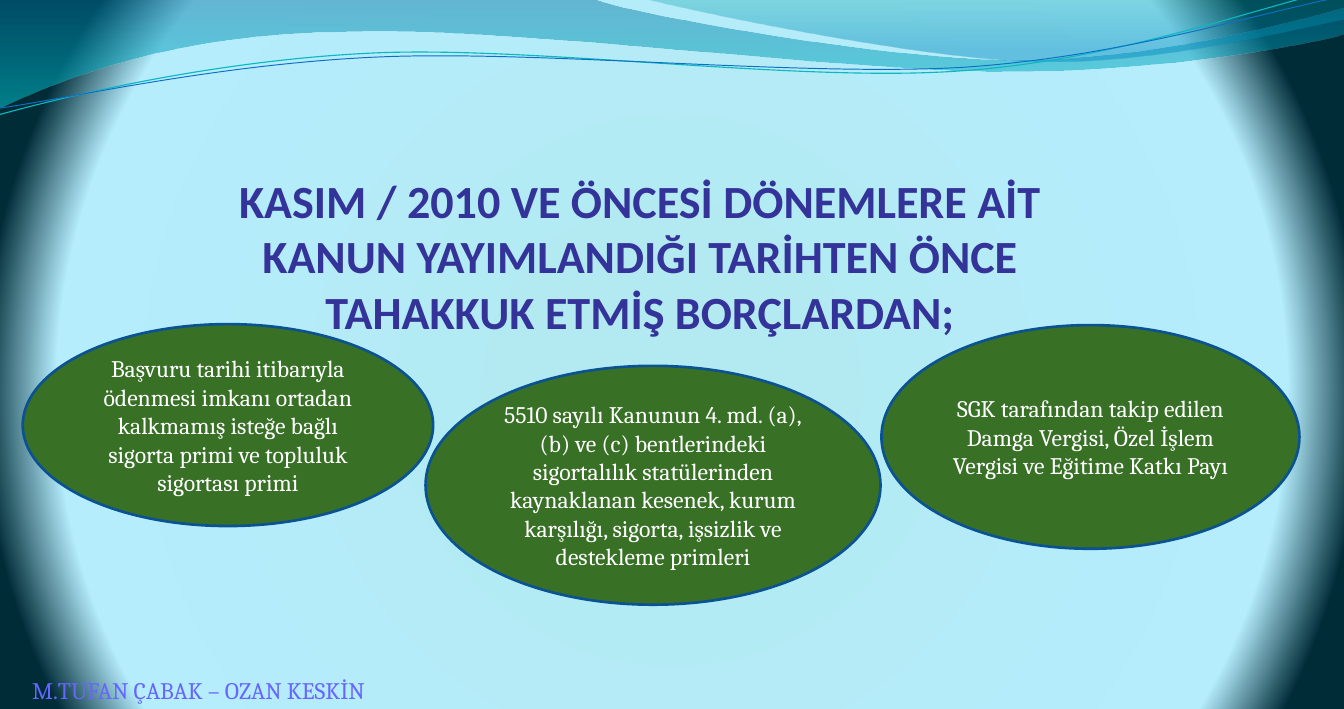
import math

import pptx
import pptx.dml.color
import pptx.enum.shapes
import pptx.enum.text
import pptx.oxml
import pptx.oxml.ns
import pptx.util
from lxml import etree
from pptx.util import Inches

COLORS = {
    "title": "333399", "footer": "6666FF", "white": "FFFFFF",
    "oval": "387026", "oval_line": "0B5292",
    "teal_line": "0AB8BF", "blue_line": "0F6FC6",
    "center": "B3EAF2", "pale": "B5EDFD", "edge": "002C38",
    "wave_top": "0074A1", "wave_bottom": "00C6CF",
    "crest_top": "00A1A9", "crest_bottom": "008BBF",
}
LINEAR = '<a:lin %s ang="5400000" scaled="0"/>'
RADIAL = ('<a:path %s path="circle">'
          '<a:fillToRect l="10000" t="110000" r="10000" b="100000"/></a:path>')
TILT = 357.3

BANDS = [
    ([(0, 0)],
     [[(6.24, -0.01)],
      [(6.74, 0.17), (9.41, 0.63), (10.75, 0.63)],
      [(12.09, 0.63), (13.58, 0.26), (14.18, 0.09)],
      [(14.19, 0.36)],
      [(13.94, 0.44), (12.33, 0.76), (10.57, 0.75)],
      [(8.82, 0.75), (5.41, 0.28), (3.65, 0.34)],
      [(1.83, 0.35), (0.65, 0.83), (-0.01, 1.13)]],
     [(0, "wave_top", 45), (100, "wave_bottom", 55)]),
    ([(6.79, -0.01)],
     [[(7.22, 0.11), (9.67, 0.62), (10.9, 0.65)],
      [(12.13, 0.69), (13.63, 0.32), (14.18, 0.21)],
      [(14.18, 0)]],
     [(0, "crest_top", 30), (80, "crest_bottom", 45)]),
]
STRANDS = [
    ([(-0.01, 1.21)],
     [[(0.68, 1.02), (2.24, 0.64), (3.92, 0.56)],
      [(5.61, 0.48), (8.39, 0.87), (10.1, 0.75)],
      [(11.8, 0.64), (13.31, 0.06), (14.15, -0.12)]],
     (7.07, 0.57), "teal_line", 0.85),
    ([(0, 1.14)],
     [[(0.67, 1.05), (2.32, 0.67), (4.02, 0.6)],
      [(5.71, 0.53), (8.46, 0.81), (10.16, 0.71)],
      [(11.85, 0.6), (13.34, 0.12), (14.18, -0.04)]],
     (7.09, 0.59), "blue_line", 0.75),
]
TITLE = ("KASIM / 2010 VE ÖNCESİ DÖNEMLERE AİT KANUN YAYIMLANDIĞI "
         "TARİHTEN ÖNCE TAHAKKUK ETMİŞ BORÇLARDAN;")
OVALS = [
    ((4.49, 3.86, 4.8, 2.52),
     "5510 sayılı Kanunun 4. md. (a),(b) ve (c) bentlerindeki sigortalılık "
     "statülerinden kaynaklanan kesenek, kurum karşılığı, sigorta, işsizlik "
     "ve destekleme primleri"),
    ((0.24, 3.42, 4.33, 2.13),
     "Başvuru tarihi itibarıyla ödenmesi imkanı ortadan kalkmamış isteğe "
     "bağlı sigorta primi ve topluluk sigortası primi"),
    ((9.3, 3.43, 4.41, 2.36),
     "SGK tarafından takip edilen Damga Vergisi, Özel İşlem Vergisi ve "
     "Eğitime Katkı Payı"),
]


def rgb(name):
    """Return the named colour."""
    return pptx.dml.color.RGBColor.from_string(COLORS[name])


def sub(parent, tag, **attrs):
    """Append a DrawingML child element."""
    return etree.SubElement(parent, pptx.oxml.ns.qn(tag), **attrs)


def set_gradient(fill, element, stops, shade):
    """Give a fill its stops of position, colour and opacity."""
    fill.gradient()
    grad = element.find(".//" + pptx.oxml.ns.qn("a:gradFill"))
    for child in list(grad):
        grad.remove(child)
    stop_list = sub(grad, "a:gsLst")
    for pos, color, opacity in stops:
        clr = sub(sub(stop_list, "a:gs", pos=str(pos * 1000)),
                  "a:srgbClr", val=COLORS[color])
        if opacity < 100:
            sub(clr, "a:alpha", val=str(opacity * 1000))
    grad.append(pptx.oxml.parse_xml(shade % pptx.oxml.ns.nsdecls("a")))


def turn(points, pivot, degrees):
    """Rotate points clockwise about a pivot."""
    cos, sin = math.cos(math.radians(degrees)), math.sin(math.radians(degrees))
    px, py = pivot
    return [(px + (x - px) * cos - (y - py) * sin,
             py + (x - px) * sin + (y - py) * cos) for x, y in points]


def add_outline(s, start, segments, close):
    """Add a freeform of straight and cubic segments."""
    ends = [(Inches(x), Inches(y)) for x, y in start + [seg[-1] for seg in segments]]
    builder = s.shapes.build_freeform(*ends[0])
    builder.add_line_segments(ends[1:], close=close)
    sp = builder.convert_to_shape()
    sp.shadow.inherit = False
    sides = list(sp.element.iter(pptx.oxml.ns.qn("a:lnTo")))
    for side, seg in zip(sides, segments):
        if len(seg) == 3:
            curve = etree.Element(pptx.oxml.ns.qn("a:cubicBezTo"))
            for x, y in seg:
                sub(curve, "a:pt", x=str(Inches(x) - sp.left), y=str(Inches(y) - sp.top))
            side.getparent().replace(side, curve)
    return sp


def add_band(s, start, segments, stops):
    """Add a translucent wave band."""
    sp = add_outline(s, start, segments, True)
    set_gradient(sp.fill, sp.element, stops, LINEAR)
    sp.line.fill.background()


def add_strand(s, start, segments, pivot, color, width):
    """Add a thin wavy line with a slight tilt."""
    level = [turn(seg, pivot, -TILT) for seg in segments]
    sp = add_outline(s, turn(start, pivot, -TILT), level, False)
    sp.rotation = TILT
    sp.fill.background()
    sp.line.color.rgb = rgb(color)
    sp.line.width = pptx.util.Pt(width)


def write(tf, text, size, font, color, centered=True, bold=False):
    """Write one paragraph in a text frame."""
    tf.word_wrap = True
    p = tf.paragraphs[0]
    align = pptx.enum.text.PP_ALIGN
    p.alignment = align.CENTER if centered else align.LEFT
    r = p.add_run()
    r.text = text
    r.font.size = pptx.util.Pt(size)
    r.font.name = font
    r.font.bold = bold
    r.font.color.rgb = rgb(color)


def add_text(s, box):
    """Add a text box and return its frame."""
    return s.shapes.add_textbox(*map(Inches, box)).text_frame


def add_oval(s, box, text):
    """Add a green oval with centred text."""
    sp = s.shapes.add_shape(pptx.enum.shapes.MSO_SHAPE.OVAL, *map(Inches, box))
    sp.shadow.inherit = False
    sp.fill.solid()
    sp.fill.fore_color.rgb = rgb("oval")
    sp.line.color.rgb = rgb("oval_line")
    sp.line.width = pptx.util.Pt(2)
    sp.text_frame.vertical_anchor = pptx.enum.text.MSO_ANCHOR.MIDDLE
    write(sp.text_frame, text, 18, "Cambria", "white")


def main():
    """Build the slide and save it."""
    prs = pptx.Presentation()
    prs.slide_width, prs.slide_height = Inches(14.18), Inches(7.48)
    s = prs.slides.add_slide(prs.slide_layouts[6])
    set_gradient(s.background.fill, s.element,
                 [(14, "center", 100), (81, "pale", 100), (91, "edge", 100)], RADIAL)
    for band in BANDS:
        add_band(s, *band)
    for strand in STRANDS:
        add_strand(s, *strand)
    tf = add_text(s, (2.34, 1.77, 8.9, 1.97))
    tf.margin_left, tf.margin_right = 0, Inches(0.07)
    write(tf, TITLE, 35, "Calibri", "title", bold=True)
    tf = add_text(s, (0.24, 7.08, 4.09, 0.4))
    write(tf, "M.TUFAN ÇABAK – OZAN KESKİN", 18, "Cambria", "footer", centered=False)
    for box, text in OVALS:
        add_oval(s, box, text)
    prs.save("out.pptx")


if __name__ == "__main__":
    main()
